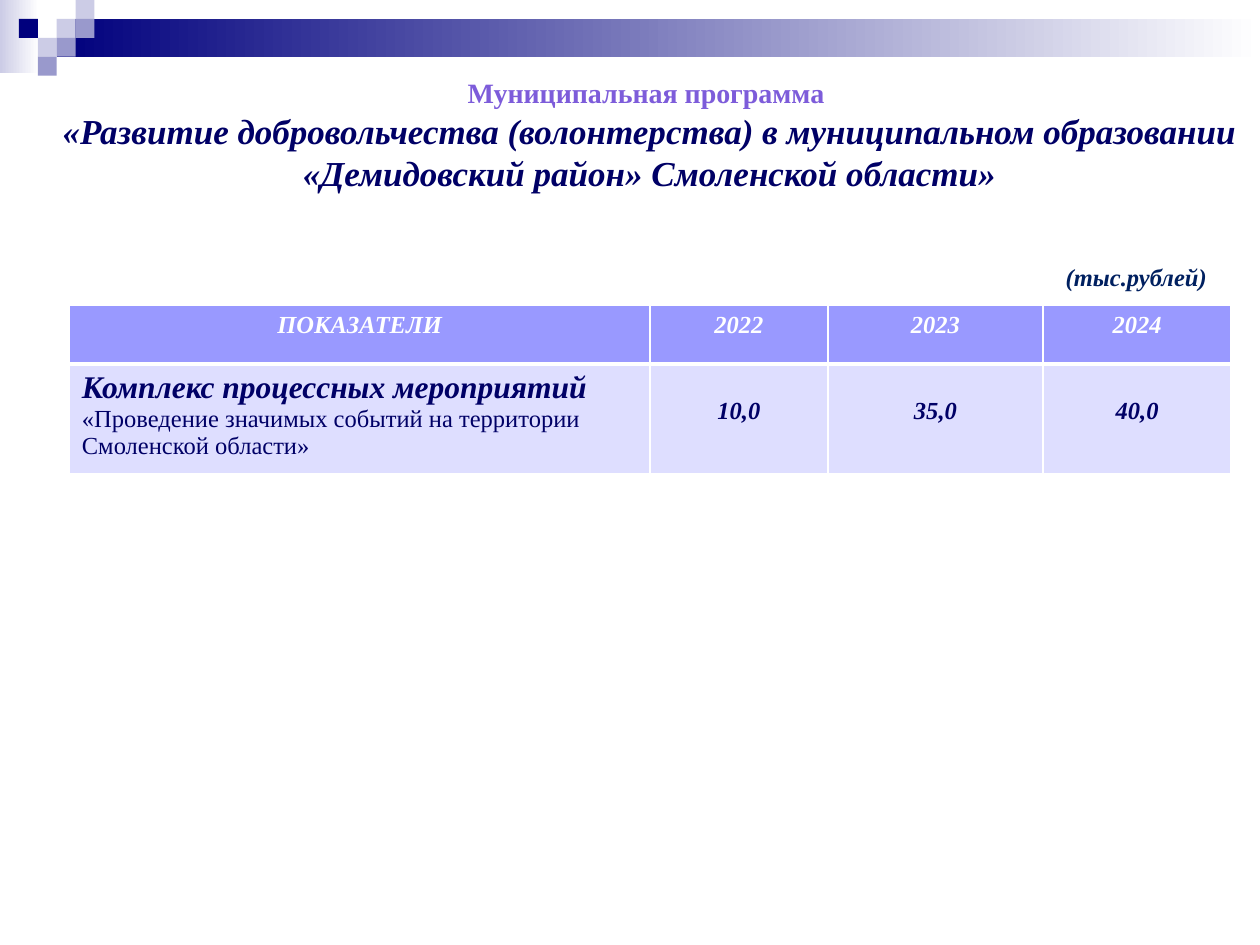
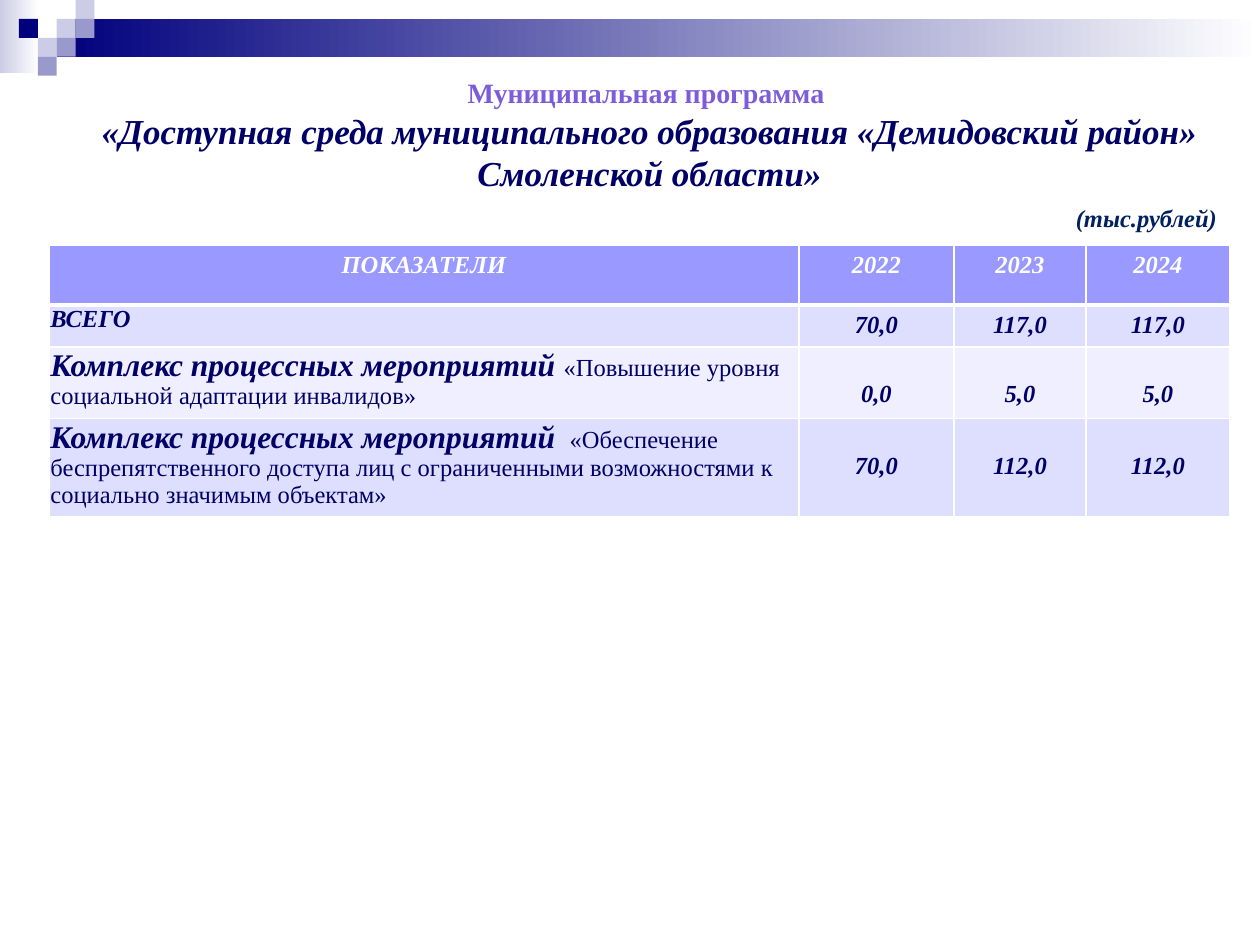
"""Build two slides on municipal programmes, each with a budget table."""
from dataclasses import dataclass

from lxml import etree
from pptx import Presentation
from pptx.dml.color import RGBColor
from pptx.enum.shapes import MSO_SHAPE
from pptx.enum.text import PP_ALIGN
from pptx.oxml.ns import qn
from pptx.util import Inches, Pt

RECT = MSO_SHAPE.RECTANGLE
LEFT, CENTER = PP_ALIGN.LEFT, PP_ALIGN.CENTER


@dataclass(frozen=True)
class Theme:
    """Colours, font and type sizes shared by the slides."""

    font: str = "Times New Roman"
    navy: str = "00007D"
    lilac: str = "CCCCE6"
    violet: str = "9999CC"
    white: str = "FFFFFF"
    kicker: str = "7D5CDA"
    ink: str = "000066"
    unit: str = "002060"
    header: str = "9999FF"
    bands: tuple = ("DEDEFF", "EFEFFF")
    kicker_size: int = 16
    title_size: int = 20
    lead_size: int = 18
    body_size: int = 14


T = Theme()
SQUARE = 0.15
SQUARES = [
    (3, 1, T.lilac), (4, 0, T.lilac), (4, 1, T.violet), (2, 2, T.lilac),
    (1, 1, T.navy), (3, 2, T.violet), (2, 3, T.violet),
]
HEADINGS = ["ПОКАЗАТЕЛИ", "2022", "2023", "2024"]
LEAD = "Комплекс процессных мероприятий "


def add_run(p, text, size=T.body_size, color=T.ink, bold=True, italic=True):
    """Append a formatted run to a paragraph."""
    r = p.add_run()
    r.text = text
    r.font.name = T.font
    r.font.size = Pt(size)
    r.font.bold = bold
    r.font.italic = italic
    r.font.color.rgb = RGBColor.from_string(color)


def add_rect(s, x, y, w, h, color, fade=False):
    """Add a rectangle, plain or fading to white from left to right."""
    sp = s.shapes.add_shape(RECT, Inches(x), Inches(y), Inches(w), Inches(h))
    sp.shadow.inherit = False
    sp.line.fill.background()
    if fade:
        sp.fill.gradient()
        sp.fill.gradient_angle = 0
        for stop, position, tone in zip(sp.fill.gradient_stops, (0, 1), (color, T.white)):
            stop.position = position
            stop.color.rgb = RGBColor.from_string(tone)
    else:
        sp.fill.solid()
        sp.fill.fore_color.rgb = RGBColor.from_string(color)


def add_band(s):
    """Draw the top band with its mosaic of squares."""
    add_rect(s, 0, 0, 0.31, 0.58, T.lilac, fade=True)
    add_rect(s, 0.45, 0.15, 9.55, 0.3, T.navy, fade=True)
    for col, row, color in SQUARES:
        add_rect(s, col * SQUARE, row * SQUARE, SQUARE, SQUARE, color)


def add_text_box(s, x, y, w, h, wrap=True):
    """Add an empty text box and return its text frame."""
    tf = s.shapes.add_textbox(Inches(x), Inches(y), Inches(w), Inches(h)).text_frame
    tf.word_wrap = wrap
    return tf


def add_title(s, name):
    """Add the programme label and the programme name."""
    tf = add_text_box(s, 0.31, 0.55, 9.69, 1.04)
    p = tf.paragraphs[0]
    p.alignment = CENTER
    add_run(p, "Муниципальная программа ", size=T.kicker_size, color=T.kicker, italic=False)
    p = tf.add_paragraph()
    p.alignment = CENTER
    add_run(p, name, size=T.title_size)


def add_unit(s, x, y):
    """Add the caption with the unit of the figures."""
    tf = add_text_box(s, x, y, 1.33, 0.34, wrap=False)
    add_run(tf.paragraphs[0], "(тыс.рублей)", color=T.unit)


def style_cell(cell, fill, bottom=1):
    """Set the white borders and the fill of a cell."""
    tcPr = cell._tc.get_or_add_tcPr()
    for side, width in (("L", 1), ("R", 1), ("T", 1), ("B", bottom)):
        ln = etree.SubElement(tcPr, qn(f"a:ln{side}"), w=str(Pt(width)))
        solid = etree.SubElement(ln, qn("a:solidFill"))
        etree.SubElement(solid, qn("a:srgbClr"), val=T.white)
    cell.fill.solid()
    cell.fill.fore_color.rgb = RGBColor.from_string(fill)


def fill_label(cell, lead, detail, tight):
    """Write the row label: a strong lead and a plain detail."""
    if tight:
        cell.margin_left = cell.margin_top = cell.margin_right = Inches(0.01)
        cell.margin_bottom = 0
    p = cell.text_frame.paragraphs[0]
    p.alignment = LEFT
    add_run(p, lead, size=T.lead_size if detail else T.body_size)
    if detail:
        add_run(p, detail, bold=False, italic=False)


def fill_centered(cell, text, color=T.ink):
    """Write centred text in a cell."""
    p = cell.text_frame.paragraphs[0]
    p.alignment = CENTER
    add_run(p, text, color=color)


def add_budget_table(s, x, y, widths, heights, rows, tight=False):
    """Add a table of indicators with one figure per year."""
    table = s.shapes.add_table(
        len(heights), len(widths), Inches(x), Inches(y),
        Inches(sum(widths)), Inches(sum(heights))).table
    for column, width in zip(table.columns, widths):
        column.width = Inches(width)
    for row, height in zip(table.rows, heights):
        row.height = Inches(height)
    for col, heading in enumerate(HEADINGS):
        cell = table.cell(0, col)
        style_cell(cell, T.header, bottom=3)
        fill_centered(cell, heading, color=T.white)
    for i, (lead, detail, figures) in enumerate(rows):
        cells = table.rows[i + 1].cells
        for cell in cells:
            style_cell(cell, T.bands[i % 2])
        fill_label(cells[0], lead, detail, tight)
        for col, figure in enumerate(figures, start=1):
            if detail:
                cells[col].margin_top = Inches(0.27)
            fill_centered(cells[col], figure)


def add_programme_slide(prs, name):
    """Add a slide with the shared band and title."""
    s = prs.slides.add_slide(prs.slide_layouts[6])
    add_band(s)
    add_title(s, name)
    return s


def main():
    """Build and save the presentation."""
    prs = Presentation()
    prs.slide_width, prs.slide_height = Inches(10), Inches(7.5)

    s = add_programme_slide(
        prs, "«Развитие добровольчества (волонтерства) в муниципальном образовании "
        "«Демидовский район» Смоленской области»")
    add_budget_table(s, 0.55, 2.42, [4.61, 1.41, 1.71, 1.49], [0.47, 0.86], [
        (LEAD, "«Проведение значимых событий на территории Смоленской области»",
         ["10,0", "35,0", "40,0"]),
    ])
    add_unit(s, 8.36, 2.03)

    s = add_programme_slide(
        prs, "«Доступная среда муниципального образования «Демидовский район» "
        "Смоленской области»")
    add_budget_table(s, 0.39, 1.95, [5.95, 1.23, 1.05, 1.14], [0.47, 0.33, 0.57, 0.78], [
        ("ВСЕГО", "", ["70,0", "117,0", "117,0"]),
        (LEAD, "«Повышение уровня социальной адаптации инвалидов»",
         ["0,0", "5,0", "5,0"]),
        (LEAD, " «Обеспечение беспрепятственного доступа лиц с ограниченными "
         "возможностями к социально значимым объектам»",
         ["70,0", "112,0", "112,0"]),
    ], tight=True)
    add_unit(s, 8.44, 1.56)

    prs.save("out.pptx")


if __name__ == "__main__":
    main()
